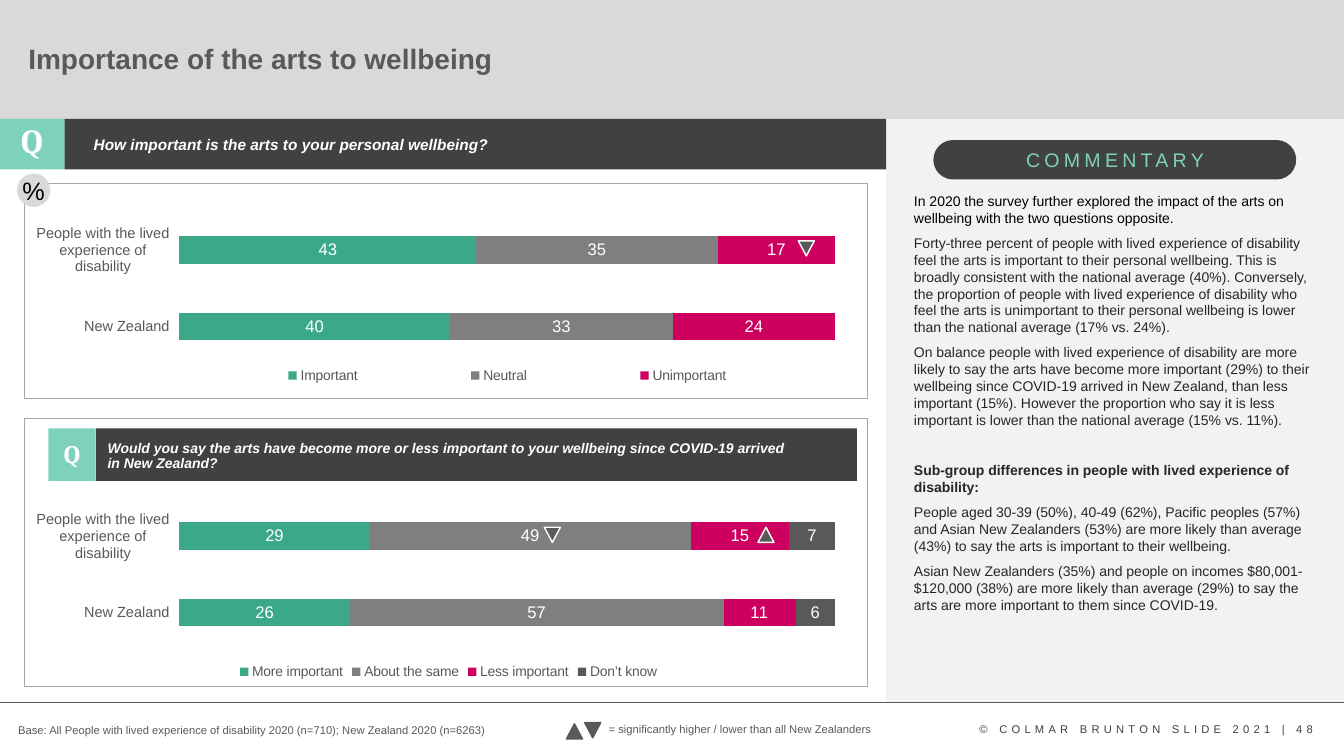
"""Build a slide on how important the arts are to wellbeing."""
from dataclasses import dataclass
from lxml.etree import SubElement
from pptx import Presentation
from pptx.chart.data import CategoryChartData
from pptx.dml.color import RGBColor
from pptx.enum.chart import XL_CHART_TYPE, XL_LABEL_POSITION, XL_LEGEND_POSITION, XL_TICK_MARK
from pptx.enum.shapes import MSO_CONNECTOR, MSO_SHAPE
from pptx.enum.text import MSO_ANCHOR, PP_ALIGN
from pptx.oxml.ns import qn
from pptx.util import Pt


@dataclass(frozen=True)
class Theme:
    sans: str = "Arial"
    serif: str = "Cambria"
    white: RGBColor = RGBColor.from_string("FFFFFF")
    black: RGBColor = RGBColor.from_string("000000")
    ink: RGBColor = RGBColor.from_string("262626")
    dark: RGBColor = RGBColor.from_string("414141")
    note: RGBColor = RGBColor.from_string("404040")
    slate: RGBColor = RGBColor.from_string("595959")
    gray: RGBColor = RGBColor.from_string("7F7F7F")
    rule: RGBColor = RGBColor.from_string("A6A6A6")
    light: RGBColor = RGBColor.from_string("D9D9D9")
    pale: RGBColor = RGBColor.from_string("F2F2F2")
    mint: RGBColor = RGBColor.from_string("7ED2BB")
    green: RGBColor = RGBColor.from_string("3AA889")
    pink: RGBColor = RGBColor.from_string("CD005F")
    tiny: float = 8
    body: float = 10
    axis: float = 10.5
    ask: float = 11
    value: float = 12
    head: float = 14
    mark: float = 18
    title: float = 20
    big: float = 24


def draw(kind, spot, fill=None, edge=None, width=0.5):
    """Add a preset shape with no shadow."""
    shape = shapes.add_shape(kind, *map(Pt, spot))
    shape.shadow.inherit = False
    if fill is None:
        shape.fill.background()
    else:
        shape.fill.solid()
        shape.fill.fore_color.rgb = fill
    if edge is None:
        shape.line.fill.background()
    else:
        shape.line.color.rgb = edge
        shape.line.width = Pt(width)
    return shape


def write(para, words, size, color, bold=False, slant=False, face=None, track=0):
    """Add one styled run to a paragraph."""
    run = para.add_run()
    run.text = words
    font = run.font
    font.name, font.size = face or theme.sans, Pt(size)
    font.bold, font.italic = bold, slant
    font.color.rgb = color
    if track:
        font._element.set("spc", str(track * 100))


theme = Theme()
deck = Presentation()
deck.slide_width, deck.slide_height = Pt(960), Pt(540)
slide = deck.slides.add_slide(deck.slide_layouts[5])
shapes = slide.shapes

title = shapes.title
title.left, title.top, title.width, title.height = map(Pt, (13, 15, 806, 56))
title.text_frame.vertical_anchor = MSO_ANCHOR.MIDDLE
para = title.text_frame.paragraphs[0]
para.alignment, para.line_spacing = PP_ALIGN.LEFT, 0.9
write(para, "Importance of the arts to wellbeing", theme.title, theme.slate, bold=True)
band = draw(MSO_SHAPE.RECTANGLE, (0, -1.4, 960, 86.4), theme.light)
title.element.addprevious(band.element)

cats = ("New Zealand", "People with the lived experience of disability")
plot_box = (0.166, 0.114, 0.814, 0.73)
wide_key = (0.166, 0.84, 0.814, 0.11)
colors = (theme.green, theme.gray, theme.pink, theme.slate)
charts = (
    (134, wide_key, (("Important", (40, 43)), ("Neutral", (33, 35)), ("Unimportant", (24, 17)))),
    (338.4, None, (("More important", (26, 29)), ("About the same", (57, 49)),
                   ("Less important", (11, 15)), ("Don’t know", (6, 7)))),
)
for top, key_box, rows in charts:
    data = CategoryChartData()
    data.categories = cats
    for name, values in rows:
        data.add_series(name, values)
    chart = shapes.add_chart(XL_CHART_TYPE.BAR_STACKED_100, Pt(26), Pt(top), Pt(582), Pt(150), data).chart
    chart.has_title = False
    chart.font.name, chart.font.size = theme.sans, Pt(theme.body)
    chart.font.color.rgb = theme.black
    chart.has_legend = True
    key = chart.legend
    key.position, key.include_in_layout = XL_LEGEND_POSITION.BOTTOM, False
    axis = chart.category_axis
    axis.format.line.fill.background()
    axis.major_tick_mark = XL_TICK_MARK.OUTSIDE
    for font, size in ((key.font, theme.body), (axis.tick_labels.font, theme.axis)):
        font.name, font.size = theme.sans, Pt(size)
        font.color.rgb = theme.slate
    chart.value_axis.has_major_gridlines = False
    chart.value_axis.visible = False
    plot = chart.plots[0]
    plot.gap_width, plot.overlap, plot.vary_by_categories = 177, 100, False
    for series, color in zip(plot.series, colors):
        series.format.fill.solid()
        series.format.fill.fore_color.rgb = color
        labels = series.data_labels
        labels.show_value, labels.position = True, XL_LABEL_POSITION.CENTER
        labels.font.name, labels.font.size = theme.sans, Pt(theme.value)
        labels.font.color.rgb = theme.white
    area = chart.element.find(".//" + qn("c:plotArea"))
    for node, place, frame in ((area, 0, plot_box), (key._element, 1, key_box)):
        if frame is None:
            continue
        for old in node.findall(qn("c:layout")):
            node.remove(old)
        layout = SubElement(node, qn("c:layout"))
        node.insert(place, layout)
        manual = SubElement(layout, qn("c:manualLayout"))
        if node is area:
            SubElement(manual, qn("c:layoutTarget")).set("val", "inner")
        for tag in ("xMode", "yMode"):
            SubElement(manual, qn("c:" + tag)).set("val", "edge")
        for tag, part in zip("xywh", frame):
            SubElement(manual, qn("c:" + tag)).set("val", str(part))

for spot, fill in (
    ((633, 85, 327, 417), theme.pale),
    ((46, 85, 587, 36), theme.dark),
    ((0, 85, 46, 36), theme.mint),
    ((68.4, 306, 543.6, 37.5), theme.dark),
    ((34.6, 306, 33.8, 37.5), theme.mint),
):
    draw(MSO_SHAPE.RECTANGLE, spot, fill)
for top, height in ((131, 153.4), (299, 191.5)):
    draw(MSO_SHAPE.RECTANGLE, (17.3, top, 602.6, height), edge=theme.rule)

pill = draw(MSO_SHAPE.ROUNDED_RECTANGLE, (666.7, 100, 259.2, 28.2), theme.dark)
pill.adjustments[0] = 0.5
rule = shapes.add_connector(MSO_CONNECTOR.STRAIGHT, Pt(0), Pt(502), Pt(960), Pt(502))
rule.line.color.rgb, rule.line.width = theme.slate, Pt(0.5)
SubElement(rule.element.spPr, qn("a:effectLst"))

disc = draw(MSO_SHAPE.OVAL, (12.2, 124, 23.8, 23.8), theme.light)
frame = disc.text_frame
frame.margin_left = frame.margin_right = frame.margin_top = frame.margin_bottom = 0
frame.vertical_anchor, frame.word_wrap = MSO_ANCHOR.MIDDLE, False
frame.paragraphs[0].alignment = PP_ALIGN.CENTER
write(frame.paragraphs[0], "%", theme.mark, theme.black)

ask = dict(color=theme.white, bold=True, slant=True)
cue = dict(color=theme.white, bold=True, face=theme.serif)
left, mid = PP_ALIGN.LEFT, PP_ALIGN.CENTER
for spot, words, size, look, align, wrap, pitch in (
    ((5.8, 82, 34, 36), "Q", theme.big, cue, mid, True, 1),
    ((34.6, 309.6, 33.8, 29), "Q", theme.mark, cue, mid, True, 1),
    ((59.8, 94.3, 547, 33), "How important is the arts to your personal wellbeing?",
     theme.ask, ask, left, True, 0.9),
    ((69.8, 311.8, 500.4, 19), "Would you say the arts have become more or less important to your "
     "wellbeing since COVID-19 arrived in New Zealand?", theme.body, ask, left, True, 0.9),
    ((725.8, 102.2, 145.4, 24.5), "COMMENTARY", theme.head, dict(color=theme.mint, track=3), left, False, 1),
    ((5.8, 513.4, 351.4, 17), "Base: All People with lived experience of disability 2020 (n=710); "
     "New Zealand 2020 (n=6263)", theme.tiny, dict(color=theme.slate), left, True, 1),
    ((427.7, 512.6, 204.5, 17), "= significantly higher / lower than all New Zealanders",
     theme.tiny, dict(color=theme.slate), left, False, 1),
    ((692.6, 512.6, 260, 17), "© COLMAR BRUNTON SLIDE 2021 | 48",
     theme.tiny, dict(color=theme.note, track=3), left, True, 1),
):
    frame = shapes.add_textbox(*map(Pt, spot)).text_frame
    frame.word_wrap = wrap
    para = frame.paragraphs[0]
    para.alignment, para.line_spacing = align, pitch
    write(para, words, size, **look)

frame = shapes.add_textbox(Pt(645.8), Pt(134), Pt(302.4), Pt(310)).text_frame
frame.word_wrap = True
for count, (words, color, bold, gap) in enumerate((
    ("In 2020 the survey further explored the impact of the arts on wellbeing with the two questions "
     "opposite.", theme.black, False, 0),
    ("Forty-three percent of people with lived experience of disability feel the arts is important to their "
     "personal wellbeing. This is broadly consistent with the national average (40%). Conversely, the "
     "proportion of people with lived experience of disability who feel the arts is unimportant to their "
     "personal wellbeing is lower than the national average (17% vs. 24%).", theme.ink, False, 6),
    ("On balance people with lived experience of disability are more likely to say the arts have become more "
     "important (29%) to their wellbeing since COVID-19 arrived in New Zealand, than less important (15%). "
     "However the proportion who say it is less important is lower than the national average (15% vs. 11%).",
     theme.ink, False, 6),
    ("Sub-group differences in people with lived experience of disability:", theme.ink, True, 24),
    ("People aged 30-39 (50%), 40-49 (62%), Pacific peoples (57%) and Asian New Zealanders (53%) are more "
     "likely than average (43%) to say the arts is important to their wellbeing.", theme.ink, False, 6),
    ("Asian New Zealanders (35%) and people on incomes $80,001-$120,000 (38%) are more likely than average "
     "(29%) to say the arts are more important to them since COVID-19.", theme.ink, False, 6),
)):
    para = frame.add_paragraph() if count else frame.paragraphs[0]
    para.space_before = Pt(gap)
    write(para, words, theme.body, color, bold=bold)

for x, y, turn, edge in (
    (404.6, 517, 0, theme.slate), (417.6, 516.2, 180, theme.slate),
    (570.2, 172, 180, theme.white), (541.4, 376.6, 0, theme.white), (388.8, 376.6, 180, theme.white),
):
    draw(MSO_SHAPE.ISOSCELES_TRIANGLE, (x, y, 11.5, 10.8), theme.slate, edge, 1).rotation = turn

deck.save("out.pptx")
